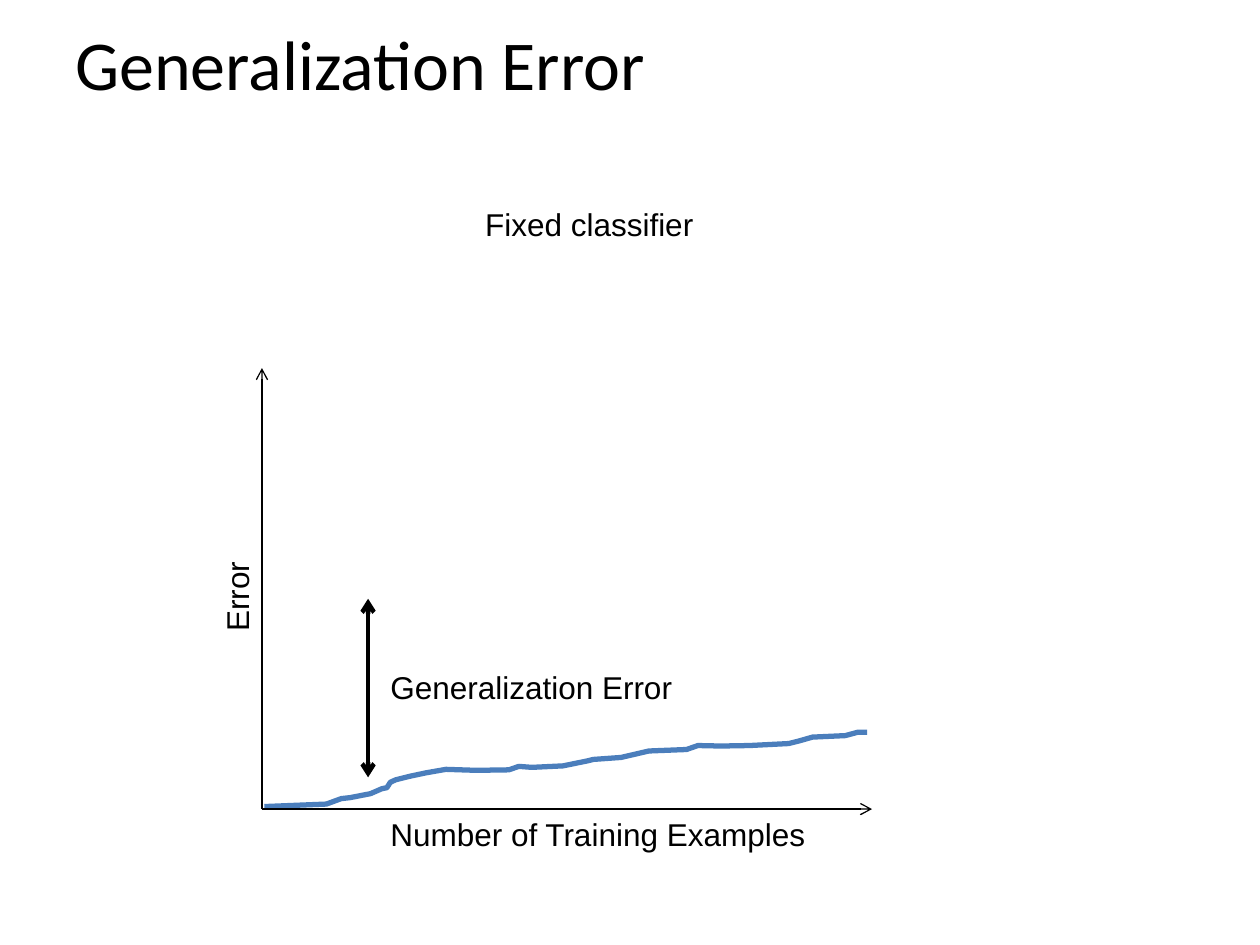
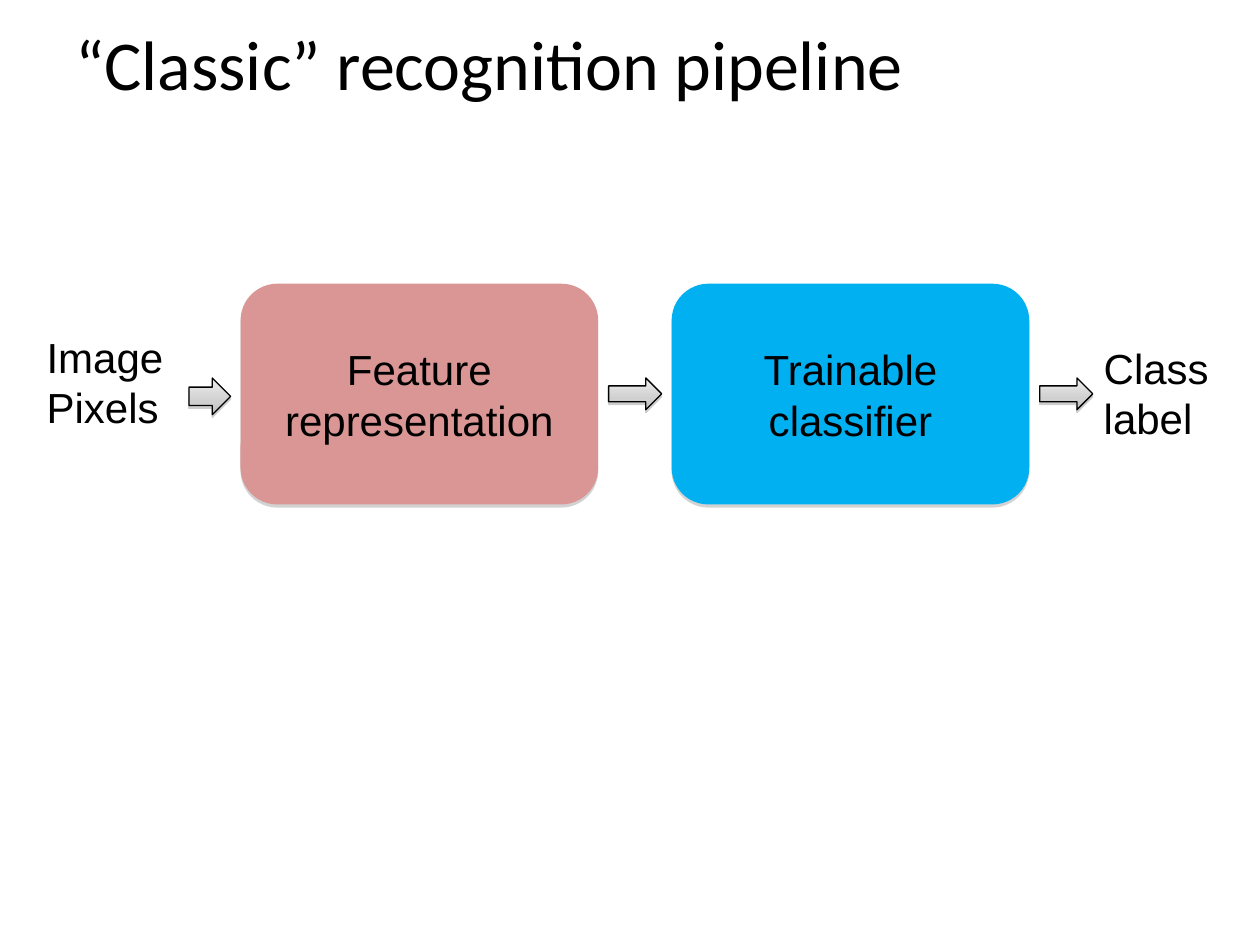
"""Build two slides on generalization error and the classic recognition pipeline."""
from copy import deepcopy

from pptx import Presentation
from pptx.dml.color import RGBColor
from pptx.enum.shapes import MSO_CONNECTOR, MSO_SHAPE
from pptx.enum.text import MSO_ANCHOR, PP_ALIGN
from pptx.oxml import parse_xml
from pptx.oxml.ns import nsdecls, qn
from pptx.oxml.xmlchemy import OxmlElement
from pptx.util import Cm, Pt

BLACK = RGBColor(0x00, 0x00, 0x00)
BLUE = RGBColor(0x4B, 0x7E, 0xBC)
ROSE = RGBColor(0xD9, 0x96, 0x94)
SKY = RGBColor(0x00, 0xB0, 0xF0)
GREYS = [(0, RGBColor(0xED, 0xED, 0xED)), (0.65, RGBColor(0xD0, 0xD0, 0xD0)),
         (1, RGBColor(0xBC, 0xBC, 0xBC))]
STRAIGHT = MSO_CONNECTOR.STRAIGHT
ROUND = MSO_SHAPE.ROUNDED_RECTANGLE
ARROW = MSO_SHAPE.RIGHT_ARROW
LEFT, CENTER = PP_ALIGN.LEFT, PP_ALIGN.CENTER
TOP, MIDDLE = MSO_ANCHOR.TOP, MSO_ANCHOR.MIDDLE


def write(shape, paras, size, font="Arial", align=LEFT, anchor=TOP, wrap=True):
    frame = shape.text_frame
    frame.word_wrap = wrap
    frame.vertical_anchor = anchor
    for i, para in enumerate(paras):
        p = frame.add_paragraph() if i else frame.paragraphs[0]
        p.alignment = align
        for j, line in enumerate(para.split("\n")):
            if j:
                p.add_line_break()
            run = p.add_run()
            run.text = line
            run.font.name = font
            run.font.size = Pt(size)
            run.font.color.rgb = BLACK


def shade(shape, alpha, dist):
    shape.shadow.inherit = False
    effects = shape._element.spPr.find(qn("a:effectLst"))
    effects.append(parse_xml(
        f'<a:outerShdw {nsdecls("a")} blurRad="0" dist="{Pt(dist)}" dir="5400000" rotWithShape="0">'
        f'<a:srgbClr val="808080"><a:alpha val="{alpha * 1000}"/></a:srgbClr></a:outerShdw>'))


prs = Presentation()
prs.slide_width, prs.slide_height = Cm(25.4), Cm(19.05)
slides = []
for title in ("Generalization Error", "“Classic” recognition pipeline"):
    slide = prs.slides.add_slide(prs.slide_layouts[6])
    box = slide.shapes.add_textbox(Cm(1.27), Cm(0), Cm(22.86), Cm(2.54))
    write(box, [title], 40, "Calibri", anchor=MIDDLE)
    slides.append(slide)
graph, flow = slides

points = [
    (533, 1626), (658, 1621), (688, 1610), (706, 1608), (747, 1600), (770, 1590),
    (780, 1588), (787, 1577), (798, 1572), (826, 1565), (859, 1558), (899, 1551),
    (960, 1553), (1026, 1552), (1046, 1545), (1072, 1547), (1135, 1544), (1184, 1534),
    (1196, 1531), (1252, 1527), (1278, 1521), (1308, 1514), (1384, 1511), (1407, 1503),
    (1453, 1504), (1511, 1503), (1590, 1499), (1610, 1494), (1638, 1486), (1704, 1483),
    (1730, 1476), (1748, 1476)]
pen = graph.shapes.build_freeform(*points[0], scale=Cm(0.01))
pen.add_line_segments(points[1:], close=False)
curve = pen.convert_to_shape()
curve.fill.background()
curve.line.color.rgb = BLUE
curve.line.width = Pt(3)
curve.shadow.inherit = False

for x1, y1, x2, y2, width, ends in (
        (5.28, 16.31, 17.58, 16.31, 0.75, ["tailEnd"]),
        (5.28, 16.31, 5.28, 7.42, 0.75, ["tailEnd"]),
        (7.42, 15.67, 7.42, 12.07, 2.5, ["headEnd", "tailEnd"])):
    line = graph.shapes.add_connector(STRAIGHT, Cm(x1), Cm(y1), Cm(x2), Cm(y2))
    line.line.color.rgb = BLACK
    line.line.width = Pt(width)
    for end in ends:
        tip = OxmlElement(f"a:{end}")
        tip.set("type", "arrow")
        line.line._get_or_add_ln().append(tip)
    line._element.spPr.append(OxmlElement("a:effectLst"))

for text, x, y, width, turn in (
        ("Number of Training Examples", 7.62, 16.31, 8.97, 0),
        ("Error", 3.81, 11.51, 1.93, 270),
        ("Generalization Error", 7.62, 13.34, 6.25, 0),
        ("Fixed classifier", 9.53, 4.01, 4.75, 0)):
    label = graph.shapes.add_textbox(Cm(x), Cm(y), Cm(width), Cm(1.02))
    label.rotation = turn
    write(label, [text], 18, wrap=False)

for text, x, color in (("Feature representation", 4.85, ROSE),
                       ("Trainable\nclassifier", 13.54, SKY)):
    stage = flow.shapes.add_shape(ROUND, Cm(x), Cm(5.72), Cm(7.21), Cm(4.45))
    stage.fill.solid()
    stage.fill.fore_color.rgb = color
    stage.line.fill.background()
    shade(stage, 35, 1.8)
    write(stage, [text], 24, align=CENTER, anchor=MIDDLE)

for x, width, height in ((3.81, 0.84, 0.74), (12.27, 1.07, 0.64), (20.96, 1.07, 0.64)):
    arrow = flow.shapes.add_shape(ARROW, Cm(x), Cm(7.62), Cm(width), Cm(height))
    arrow.fill.gradient()
    arrow.fill.gradient_angle = 270
    stops = arrow._element.spPr.find(".//" + qn("a:gsLst"))
    stops.append(deepcopy(stops[-1]))
    for stop, (place, grey) in zip(arrow.fill.gradient_stops, GREYS):
        stop.position = place
        stop.color.rgb = grey
    arrow.line.color.rgb = BLACK
    arrow.line.width = Pt(0.75)
    shade(arrow, 38, 1.6)

for paras, x, y, width in ((["Image", "Pixels"], 0.69, 6.55, 5.03),
                           (["Class label"], 22, 6.78, 3.4)):
    end = flow.shapes.add_textbox(Cm(x), Cm(y), Cm(width), Cm(2.31))
    write(end, paras, 24)

prs.save("out.pptx")
